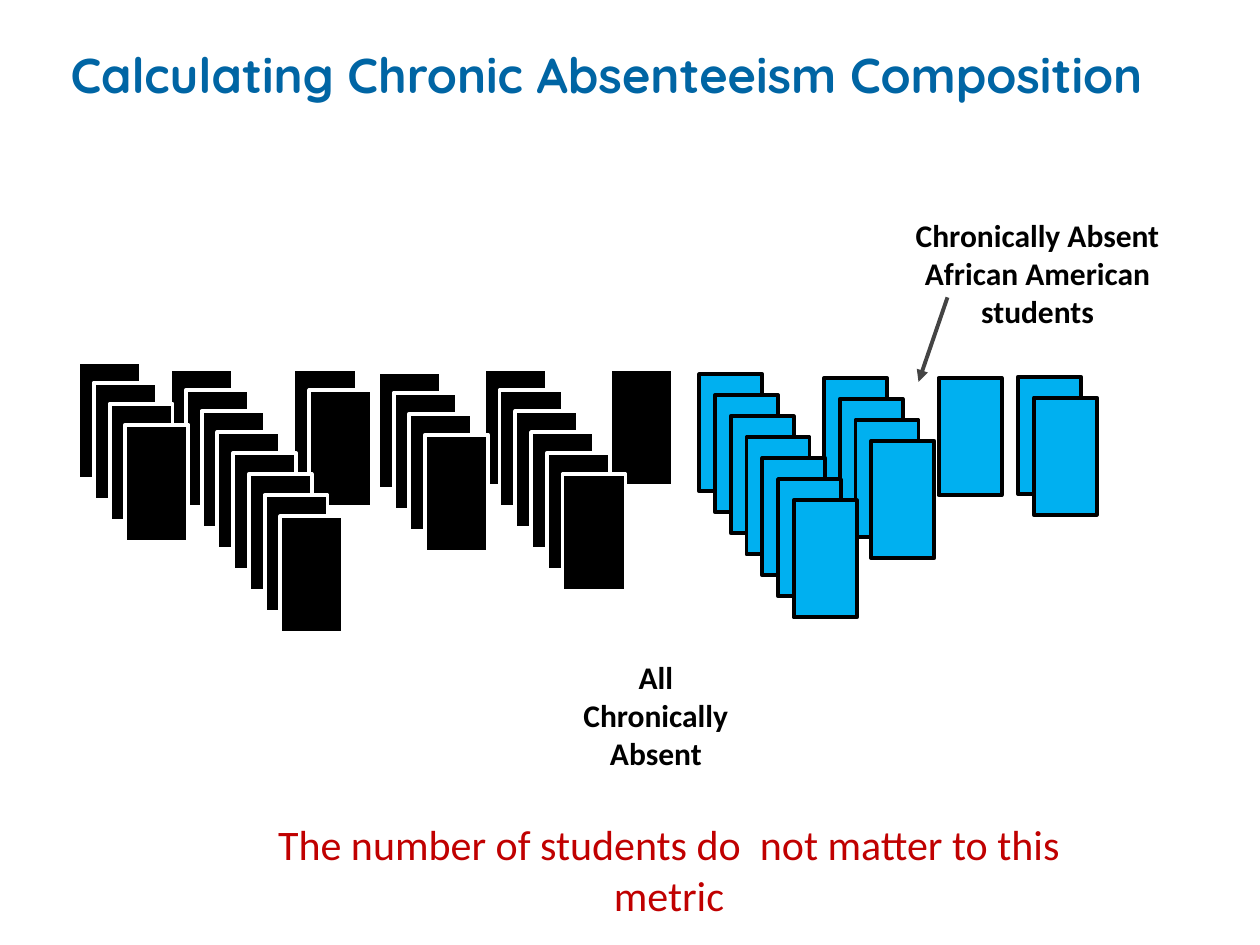
from lxml import etree
from pptx import Presentation
from pptx import util as u
from pptx.dml.color import RGBColor
from pptx.enum import shapes, text
from pptx.oxml.ns import qn

CARD_W, CARD_H = 0.5, 0.93
STEP_X, STEP_Y = 1 / 8, 1 / 6  # shift from one card to the next in a stack
BLACK, WHITE, BLUE = "000000", "FFFFFF", "00B0F0"

# Stacks from back to front: left, top, number of cards
ALL_ABSENT = [(2.33, 2.93, 2), (1.35, 2.93, 8), (0.62, 2.87, 4),
              (4.84, 2.93, 1), (3.84, 2.93, 6), (3, 2.95, 4)]
AFRICAN_AMERICAN = [(6.54, 3, 4), (5.55, 2.97, 7), (7.45, 3, 1), (8.08, 2.99, 2)]


def color(hex_string):
    return RGBColor.from_string(hex_string)


def box(*lengths):
    return [u.Inches(n) for n in lengths]


def write(sp, words, size, hex_color, font="Calibri", bold=False,
          align=text.PP_ALIGN.CENTER, anchor=text.MSO_ANCHOR.TOP):
    tf = sp.text_frame
    tf.word_wrap = True
    tf.auto_size = text.MSO_AUTO_SIZE.NONE
    tf.vertical_anchor = anchor
    p = tf.paragraphs[0]
    p.text = words
    p.alignment = align
    p.font.name, p.font.size, p.font.bold = font, u.Pt(size), bold
    p.font.color.rgb = color(hex_color)


def add_rect(parent, x, y, w, h, fill, line=None):
    sp = parent.add_shape(shapes.MSO_SHAPE.RECTANGLE, *box(x, y, w, h))
    sp.shadow.inherit = False
    sp.fill.solid()
    sp.fill.fore_color.rgb = color(fill)
    if line:
        sp.line.color.rgb = color(line)
        sp.line.width = u.Pt(2.25)
    else:
        sp.line.fill.background()
    return sp


def add_label(s, words, x, y, w, h):
    sp = add_rect(s.shapes, x, y, w, h, WHITE)
    write(sp, words, 18, BLACK, bold=True, anchor=text.MSO_ANCHOR.MIDDLE)


def add_stack(s, x, y, count, fill, line):
    parent = s.shapes.add_group_shape().shapes if count > 1 else s.shapes
    for i in range(count):
        add_rect(parent, x + i * STEP_X, y + i * STEP_Y, CARD_W, CARD_H, fill, line)


def add_arrow(s, x1, y1, x2, y2):
    c = s.shapes.add_connector(shapes.MSO_CONNECTOR.STRAIGHT, *box(x1, y1, x2, y2))
    c.line.color.rgb = color("444444")
    c.line.width = u.Pt(2.25)
    etree.SubElement(c.line._get_or_add_ln(), qn("a:tailEnd"), type="triangle")
    etree.SubElement(c._element.spPr, qn("a:effectLst"))


def main():
    prs = Presentation()
    prs.slide_width, prs.slide_height = box(10, 7.5)
    s = prs.slides.add_slide(prs.slide_layouts[5])

    # Title
    title = s.shapes.title
    title.left, title.top, title.width, title.height = box(0.46, 0.3, 9, 1.12)
    write(title, "Calculating Chronic Absenteeism Composition", 28, "0065A4",
          font="Quicksand", bold=True, align=text.PP_ALIGN.LEFT)

    # Labels and arrow
    add_label(s, "All Chronically Absent", 4.5, 5.17, 1.41, 1.01)
    add_label(s, "Chronically Absent African American students", 7.06, 1.66, 2.35, 1.01)
    add_arrow(s, 7.52, 2.36, 7.29, 3.03)

    # Student cards
    for stack in ALL_ABSENT:
        add_stack(s, *stack, BLACK, WHITE)
    for stack in AFRICAN_AMERICAN:
        add_stack(s, *stack, BLUE, BLACK)

    # Takeaway
    note = s.shapes.add_textbox(*box(1.83, 6.45, 6.96, 0.91))
    write(note, "The number of students do  not matter to this metric", 24, "C00000")

    prs.save("out.pptx")


if __name__ == "__main__":
    main()
